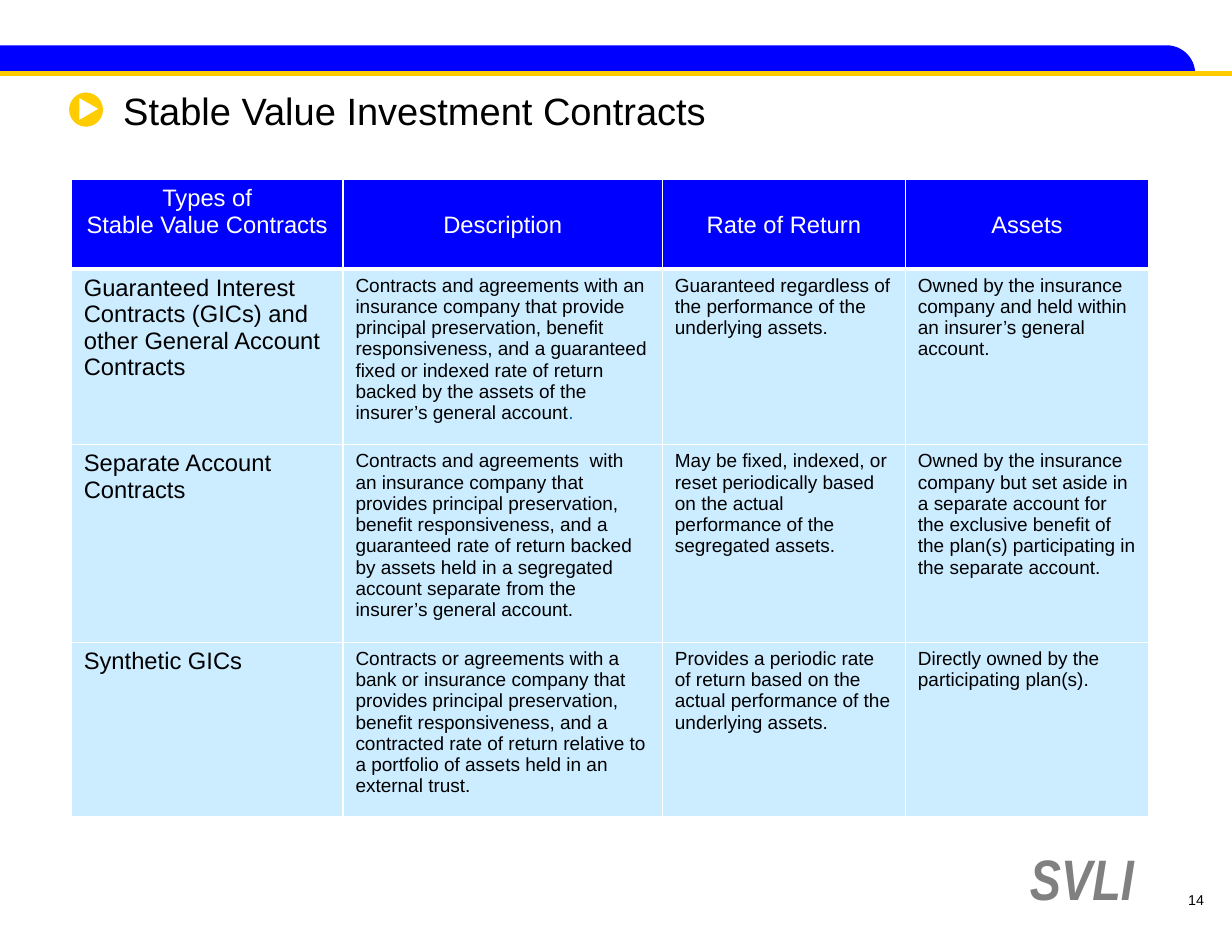
"""Build the slide that compares three types of stable value contracts."""
from math import cos, radians, sin

from lxml import etree
from pptx import Presentation
from pptx.dml.color import RGBColor
from pptx.enum.shapes import MSO_CONNECTOR, MSO_SHAPE
from pptx.enum.text import MSO_ANCHOR, PP_ALIGN
from pptx.oxml.ns import qn
from pptx.util import Pt

STRAIGHT = MSO_CONNECTOR.STRAIGHT
OVAL = MSO_SHAPE.OVAL
TOP = MSO_ANCHOR.TOP
LEFT, CENTER = PP_ALIGN.LEFT, PP_ALIGN.CENTER

COLORS = {
    "blue": "0000FF",
    "gold": "FFCC00",
    "pale": "CCECFF",
    "white": "FFFFFF",
    "black": "000000",
    "gray": "808080",
    "stop": "005BD3",
}


def paint(shape, color):
    """Give a shape a plain fill without line or shadow."""
    shape.shadow.inherit = False
    shape.fill.solid()
    shape.fill.fore_color.rgb = RGBColor.from_string(COLORS[color])
    shape.line.fill.background()


def style(paragraph, size, color, align=LEFT, name="Arial"):
    """Format a paragraph and all its runs."""
    paragraph.alignment = align
    for run in paragraph.runs:
        run.font.name = name
        run.font.size = Pt(size)
        run.font.color.rgb = RGBColor.from_string(COLORS[color])


presentation = Presentation()
presentation.slide_width = Pt(777.6)
presentation.slide_height = Pt(597.6)
slide = presentation.slides.add_slide(presentation.slide_layouts[6])
shapes = slide.shapes

bar_top, bar_bottom, bar_right = 28.6, 46.6, 754.4
radius = bar_bottom - bar_top
corner = [
    (bar_right - radius + radius * sin(radians(angle)),
     bar_bottom - radius * cos(radians(angle)))
    for angle in range(0, 91, 6)
]
play_mark = [(62, 75.6), (50.2, 82.8)]

builder = shapes.build_freeform(0, Pt(bar_top))
builder.add_line_segments([(Pt(x), Pt(y)) for x, y in corner + [(0, bar_bottom)]])
paint(builder.convert_to_shape(), "blue")

paint(shapes.add_shape(OVAL, Pt(43.6), Pt(58.4), Pt(21.4), Pt(21.6)), "gold")
builder = shapes.build_freeform(Pt(50.2), Pt(62))
builder.add_line_segments([(Pt(62), Pt(68.7)), (Pt(50.2), Pt(75.6))])
paint(builder.convert_to_shape(), "white")

rule = shapes.add_connector(STRAIGHT, 0, Pt(bar_bottom), Pt(777.6), Pt(bar_bottom))
rule.line.color.rgb = RGBColor.from_string(COLORS["gold"])
rule.line.width = Pt(3)
etree.SubElement(rule._element.spPr, qn("a:effectLst"))

TEXT_BOXES = [
    ("14", (726.5, 558.7, 56.9, 36.7), 7.2, 9, "black", CENTER, "Arial", True),
    ("SVLI", (642.2, 528.5, 100.1, 51.1), 7.9, 36, "gray", LEFT, "Arial Narrow", False),
    ("Stable Value Investment Contracts", (38.9, 51.8, 699.8, 74.2), 38.9, 24,
     "black", LEFT, "Arial", True),
]
for text, box, inset, size, color, align, name, wrap in TEXT_BOXES:
    text_frame = shapes.add_textbox(*map(Pt, box)).text_frame
    text_frame.word_wrap = wrap
    text_frame.vertical_anchor = TOP
    text_frame.margin_left = Pt(inset)
    text_frame.margin_right = Pt(7.2)
    text_frame.text = text
    paragraph = text_frame.paragraphs[0]
    style(paragraph, size, color, align, name)
    if name == "Arial Narrow":
        paragraph.runs[0].font.bold = True
        paragraph.runs[0].font.italic = True

ROWS = [
    ["Types of\nStable Value Contracts", "Description", "Rate of Return", "Assets"],
    [
        "Guaranteed Interest Contracts (GICs) and other General Account Contracts",
        "Contracts and agreements with an insurance company that provide principal "
        "preservation, benefit responsiveness, and a guaranteed fixed or indexed rate "
        "of return backed by the assets of the insurer’s general account",
        "Guaranteed regardless of the performance of the underlying assets.",
        "Owned by the insurance company and held within an insurer’s general account.",
    ],
    [
        "Separate Account Contracts",
        "Contracts and agreements  with an insurance company that provides principal "
        "preservation, benefit responsiveness, and a guaranteed rate of return backed "
        "by assets held in a segregated account separate from the insurer’s general "
        "account.",
        "May be fixed, indexed, or reset periodically based on the actual performance "
        "of the segregated assets.",
        "Owned by the insurance company but set aside in a separate account for the "
        "exclusive benefit of the plan(s) participating in the separate account.",
    ],
    [
        "Synthetic GICs",
        "Contracts or agreements with a bank or insurance company that provides "
        "principal preservation, benefit responsiveness, and a contracted rate of "
        "return relative to a portfolio of assets held in an external trust.",
        "Provides a periodic rate of return based on the actual performance of the "
        "underlying assets.",
        "Directly owned by the participating plan(s).",
    ],
]
COLUMN_WIDTHS = [171.5, 201.6, 153.4, 153.4]
ROW_HEIGHTS = [56.5, 110.9, 124.6, 110.2]

table = shapes.add_table(
    len(ROWS), len(COLUMN_WIDTHS), Pt(45), Pt(113.3),
    Pt(sum(COLUMN_WIDTHS)), Pt(sum(ROW_HEIGHTS)),
).table
table.first_row = False
table.horz_banding = False
for column, width in zip(table.columns, COLUMN_WIDTHS):
    column.width = Pt(width)
for row, height in zip(table.rows, ROW_HEIGHTS):
    row.height = Pt(height)

for row_index, texts in enumerate(ROWS):
    header = row_index == 0
    for column_index, text in enumerate(texts):
        cell = table.cell(row_index, column_index)
        cell.text_frame.text = text
        cell.vertical_anchor = TOP
        cell.margin_left = cell.margin_right = Pt(7.9)
        cell.margin_top = Pt(20.4 if header and column_index else 3.6)
        cell.margin_bottom = Pt(3.6)
        size = 15 if header or column_index == 0 else 12
        for paragraph in cell.text_frame.paragraphs:
            style(paragraph, size, "white" if header else "black",
                  CENTER if header else LEFT)
        properties = cell._tc.get_or_add_tcPr()
        thick_side = {0: "lnB", 1: "lnT"}.get(row_index)
        for side in ("lnL", "lnR", "lnT", "lnB"):
            width = Pt(3 if side == thick_side else 1)
            border = etree.SubElement(properties, qn(f"a:{side}"), w=str(width))
            fill = etree.SubElement(border, qn("a:solidFill"))
            etree.SubElement(fill, qn("a:srgbClr"), val=COLORS["white"])
        cell.fill.solid()
        cell.fill.fore_color.rgb = RGBColor.from_string(
            COLORS["blue" if header else "pale"])

full_stop = table.cell(1, 1).text_frame.paragraphs[0].add_run()
full_stop.text = "."
full_stop.font.name = "Arial"
full_stop.font.size = Pt(12)
full_stop.font.color.rgb = RGBColor.from_string(COLORS["stop"])

presentation.save("out.pptx")
